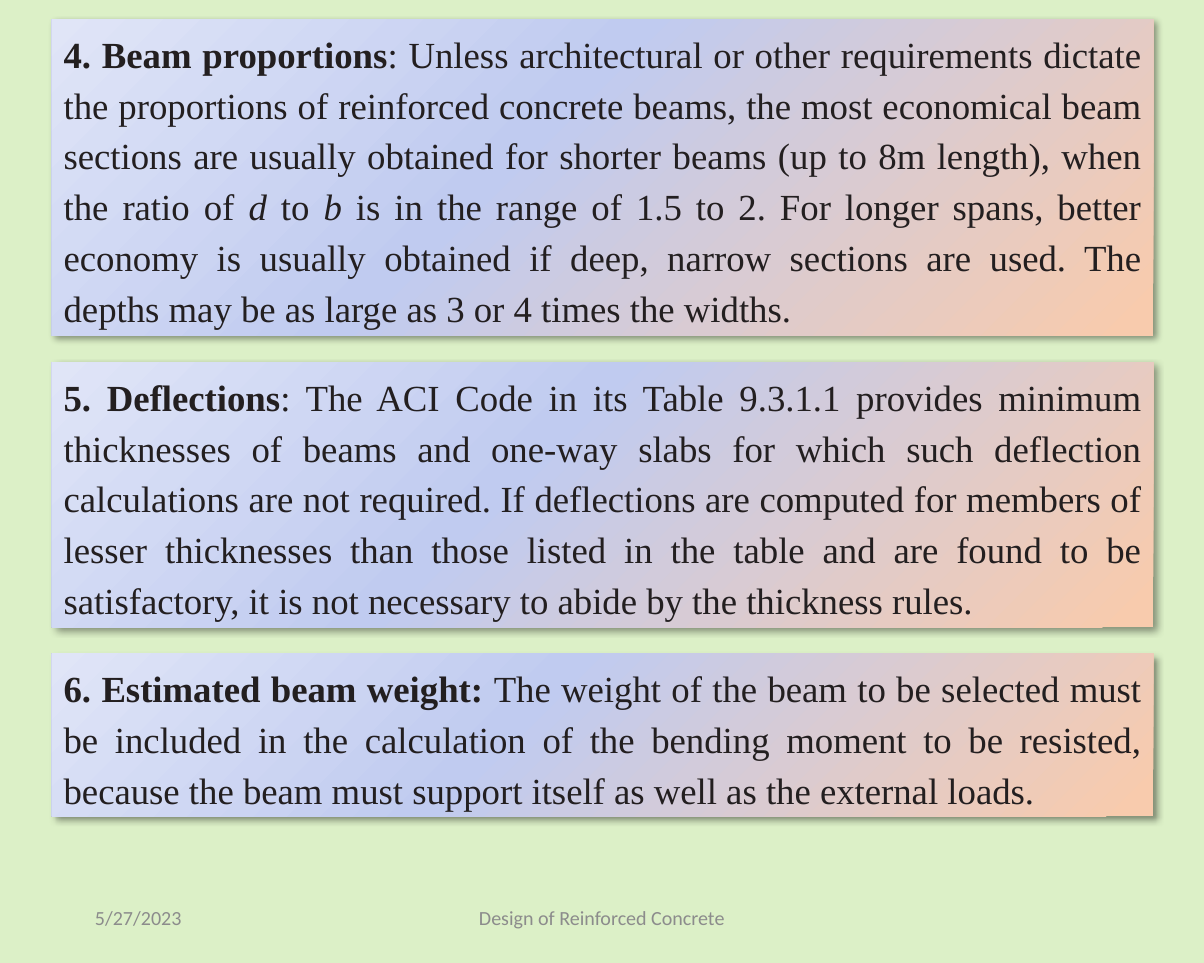
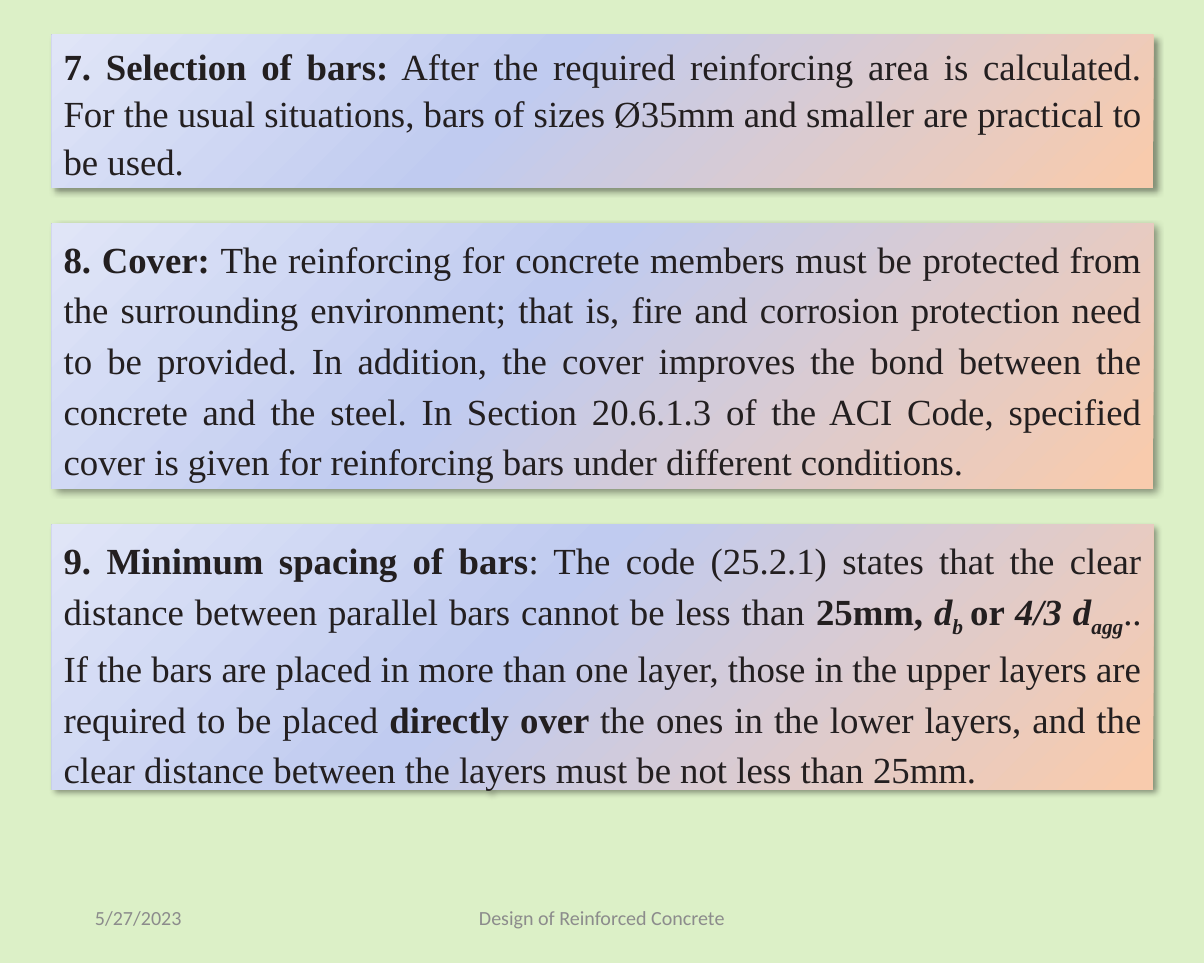
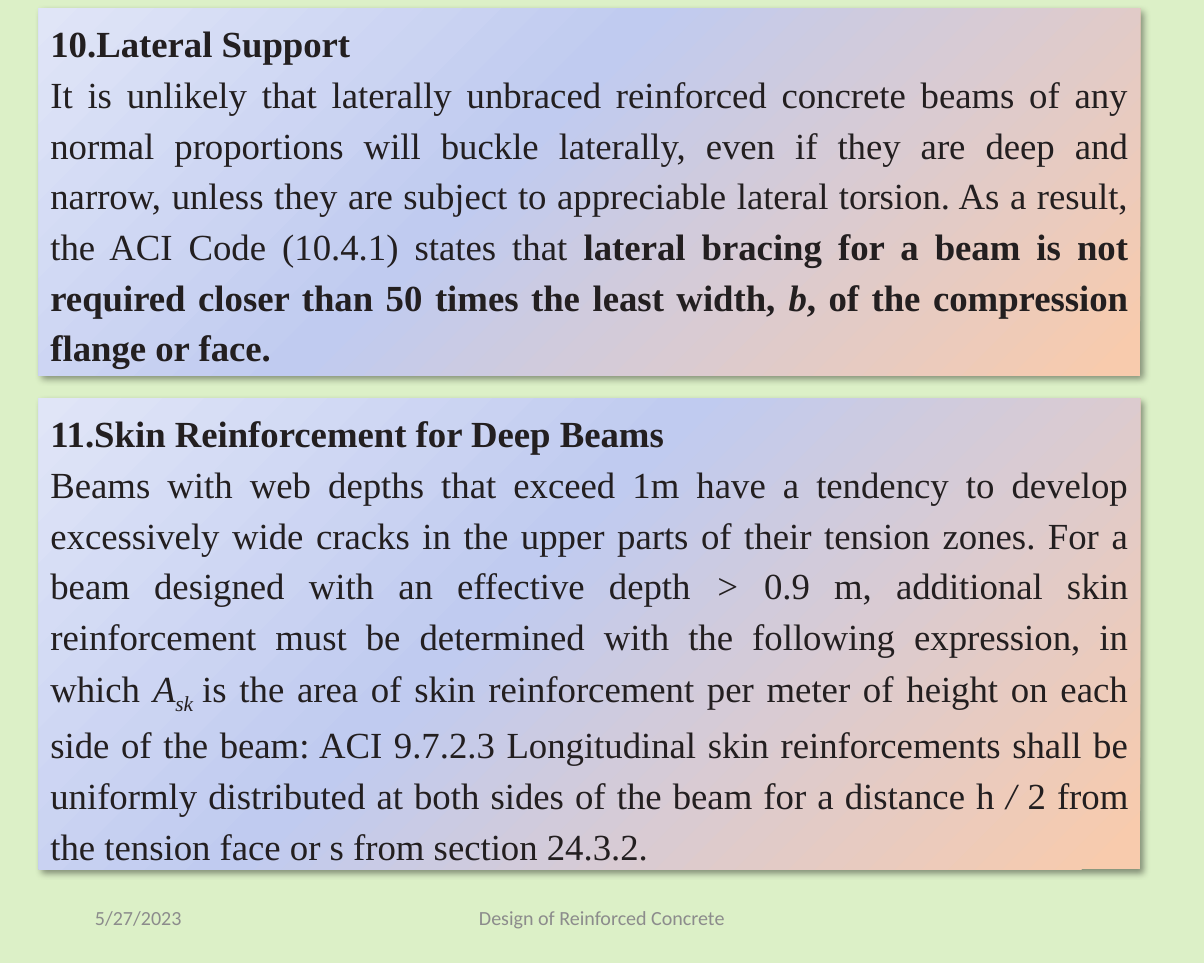
import pptx
import pptx.util
import pptx.dml.color
import pptx.enum.shapes
import pptx.enum.text
import pptx.oxml
import pptx.oxml.ns

RGB = pptx.dml.color.RGBColor
ALIGN = pptx.enum.text.PP_ALIGN
ANCHOR = pptx.enum.text.MSO_ANCHOR

PX = 9144
GREEN = RGB(0xDC, 0xF0, 0xC7)
INK = RGB(0x23, 0x1F, 0x20)
GRAY = RGB(0x8C, 0x8C, 0x8C)
PEACH = RGB(0xF8, 0xCB, 0xAD)
BLUE = RGB(0xC0, 0xCB, 0xF0)
PALE = RGB(0xE0, 0xE5, 0xF7)
BLACK = RGB(0, 0, 0)

STOPS = ((2, PEACH), (58, BLUE), (100, PALE))
SERIF = "Times New Roman"
SANS = "Calibri"
DATE = "5/27/2023"
TITLE = "Design of Reinforced Concrete"


def px(num):
    return pptx.util.Emu(num * PX)


class Deck:
    def __init__(self):
        self.prs = pptx.Presentation()
        self.prs.slide_width = px(1000)
        self.prs.slide_height = px(800)
        self.slide = None

    def page(self):
        self.slide = self.prs.slides.add_slide(self.prs.slide_layouts[6])
        fill = self.slide.background.fill
        fill.solid()
        fill.fore_color.rgb = GREEN
        self.foot(69, 225, DATE, ALIGN.LEFT)
        self.foot(331, 338, TITLE, ALIGN.CENTER)

    def font(self, run, name, size, color):
        run.font.name = name
        run.font.size = pptx.util.Pt(size)
        run.font.color.rgb = color

    def foot(self, left, width, text, align):
        box = self.slide.shapes.add_textbox(px(left), px(741), px(width), px(43))
        frame = box.text_frame
        frame.word_wrap = True
        frame.vertical_anchor = ANCHOR.MIDDLE
        frame.text = text
        para = frame.paragraphs[0]
        para.alignment = align
        self.font(para.runs[0], SANS, 12, GRAY)

    def paint(self, shape):
        stops = "".join(
            f'<a:gs pos="{pos * 1000}"><a:srgbClr val="{color}"/></a:gs>'
            for pos, color in STOPS)
        space = pptx.oxml.ns.nsdecls("a")
        grad = pptx.oxml.parse_xml(
            f'<a:gradFill {space} rotWithShape="1"><a:gsLst>{stops}</a:gsLst>'
            '<a:lin ang="13500000" scaled="0"/></a:gradFill>')
        shade = pptx.oxml.parse_xml(
            f'<a:effectLst {space}><a:outerShdw blurRad="50800" dist="38100" '
            'dir="2700000" algn="tl" rotWithShape="0">'
            f'<a:srgbClr val="{BLACK}"><a:alpha val="40000"/></a:srgbClr>'
            '</a:outerShdw></a:effectLst>')
        shape.line.fill.background()
        props = shape._element.spPr
        line = props.find(pptx.oxml.ns.qn("a:ln"))
        line.addprevious(grad)
        line.addnext(shade)

    def panel(self, left, top, height, paras, lead):
        shape = self.slide.shapes.add_shape(
            pptx.enum.shapes.MSO_SHAPE.RECTANGLE,
            px(left), px(top), px(915), px(height))
        self.paint(shape)
        frame = shape.text_frame
        frame.word_wrap = True
        frame.vertical_anchor = ANCHOR.TOP
        frame.auto_size = pptx.enum.text.MSO_AUTO_SIZE.SHAPE_TO_FIT_TEXT
        for num, parts in enumerate(paras):
            para = frame.add_paragraph() if num else frame.paragraphs[0]
            para.alignment = ALIGN.JUSTIFY
            para.line_spacing = lead
            for style, text in parts:
                self.run(para, style, text)

    def run(self, para, style, text):
        run = para.add_run()
        run.text = text
        self.font(run, SERIF, 22, INK)
        run.font.bold = "b" in style
        run.font.italic = "i" in style
        if "s" in style:
            run._r.get_or_add_rPr().set("baseline", "-25000")

    def stack(self, left, top, gap, panels):
        for height, paras, lead in panels:
            self.panel(left, top, height, paras, lead)
            top += height + gap


BEAM = [[
    ("b", "4. Beam proportions"),
    ("", ": Unless architectural or other requirements dictate the proportions "
         "of reinforced concrete beams, the most economical beam sections are "
         "usually obtained for shorter beams (up to 8m length), when the ratio of "),
    ("i", "d "),
    ("", "to "),
    ("i", "b "),
    ("", "is in the range of 1.5 to 2. For longer spans, better economy is usually "
         "obtained if deep, narrow sections are used. The depths may be as large "
         "as 3 or 4 times the widths."),
]]
BEND = [[
    ("b", "5. Deflections"),
    ("", ": The ACI Code in its Table 9.3.1.1 provides minimum thicknesses of beams "
         "and one-way slabs for which such deflection calculations are not "
         "required. If deflections are computed for members of lesser thicknesses "
         "than those listed in the table and are found to be satisfactory, it is "
         "not necessary to abide by the thickness rules."),
]]
WEIGHT = [[
    ("b", "6. Estimated beam weight: "),
    ("", "The weight of the beam to be selected must be included in the calculation "
         "of the bending moment to be resisted, because the beam must support "
         "itself as well as the external loads."),
]]
BARS = [[
    ("b", "7. Selection of bars:"),
    ("", " After the required reinforcing area is calculated. For the usual "
         "situations, bars of sizes Ø35mm and smaller are practical to be used."),
]]
COVER = [[
    ("b", "8. Cover: "),
    ("", "The reinforcing for concrete members must be protected from the "
         "surrounding environment; that is, fire and corrosion protection need to "
         "be provided. In addition, the cover improves the bond between the "
         "concrete and the steel. In Section 20.6.1.3 of the ACI Code, specified "
         "cover is given for reinforcing bars under different conditions."),
]]
SPACE = [[
    ("b", "9. Minimum spacing of bars"),
    ("", ": The code (25.2.1) states that the clear distance between parallel bars "
         "cannot be less than "),
    ("b", "25mm, "),
    ("bi", "d"),
    ("bis", "b "),
    ("b", "or "),
    ("bi", "4/3 d"),
    ("bis", "agg"),
    ("", ".. If the bars are placed in more than one layer, those in the upper "
         "layers are required to be placed "),
    ("b", "directly over "),
    ("", "the ones in the lower layers, and the clear distance between the layers "
         "must be not less than 25mm."),
]]
BRACE = [[("b", "10.Lateral Support")], [
    ("", "It is unlikely that laterally unbraced reinforced concrete beams of any "
         "normal proportions will buckle laterally, even if they are deep and "
         "narrow, unless they are subject to appreciable lateral torsion. As a "
         "result, the ACI Code (10.4.1) states that "),
    ("b", "lateral bracing for a beam is not required closer than 50 times the "
          "least width, "),
    ("bi", "b"),
    ("b", ", of the compression flange or face."),
]]
SKIN = [[("b", "11.Skin Reinforcement for Deep Beams")], [
    ("", "Beams with web depths that exceed 1m have a tendency to develop "
         "excessively wide cracks in the upper parts of their tension zones. For a "
         "beam designed with an effective depth "),
    ("i", "> "),
    ("", "0.9 m, additional skin reinforcement must be determined with the "
         "following expression, in which "),
    ("i", "A"),
    ("is", "sk "),
    ("", "is the area of skin reinforcement per meter of height on each side of the "
         "beam: ACI 9.7.2.3 Longitudinal skin reinforcements shall be uniformly "
         "distributed at both sides of the beam for a distance h "),
    ("i", "/ "),
    ("", "2 from the tension face or s from section 24.3.2."),
]]

PAGES = (
    (43, 16, 22, ((263, BEAM, 1.15), (220, BEND, 1.15), (135, WEIGHT, 1.15))),
    (43, 29, 30, ((127, BARS, 1.07), (220, COVER, 1.15), (220, SPACE, 1.15))),
    (32, 7, 19, ((305, BRACE, 1.15), (391, SKIN, 1.15))),
)


def main():
    deck = Deck()
    for left, top, gap, panels in PAGES:
        deck.page()
        deck.stack(left, top, gap, panels)
    deck.prs.save("out.pptx")


if __name__ == "__main__":
    main()
